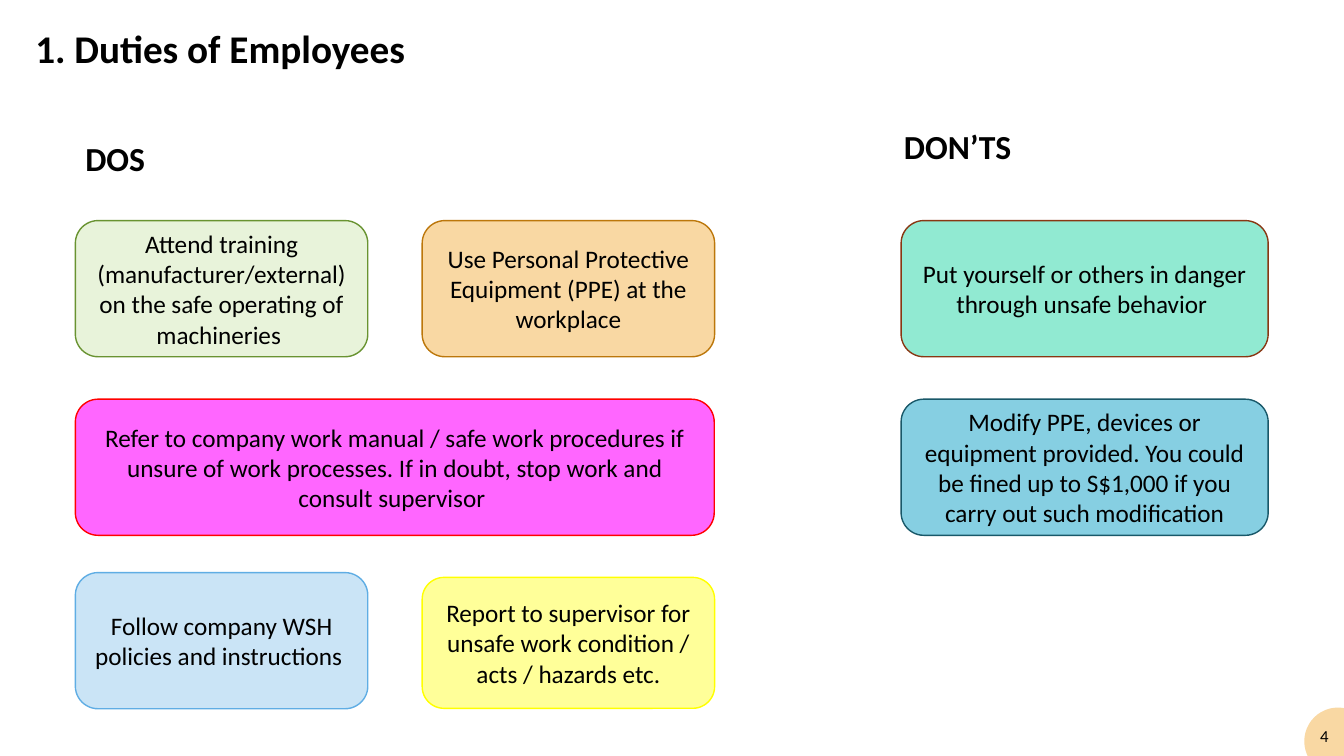
"""Build the slide on the duties of employees, with its dos and don'ts."""
import pptx
import pptx.dml.color
import pptx.enum.shapes
import pptx.enum.text
import pptx.util

Cm = pptx.util.Cm
RGBColor = pptx.dml.color.RGBColor
Shape = pptx.enum.shapes.MSO_SHAPE
Align = pptx.enum.text.PP_ALIGN

BLACK = RGBColor(0x00, 0x00, 0x00)
PALE_GREEN = RGBColor(0xE8, 0xF3, 0xDA)
GREEN = RGBColor(0x69, 0x93, 0x31)
PALE_ORANGE = RGBColor(0xF9, 0xD8, 0xA3)
ORANGE = RGBColor(0xBC, 0x77, 0x0B)
PINK = RGBColor(0xFF, 0x66, 0xFF)
RED = RGBColor(0xFF, 0x00, 0x00)
PALE_BLUE = RGBColor(0xCA, 0xE4, 0xF6)
BLUE = RGBColor(0x5F, 0xAD, 0xE4)
PALE_YELLOW = RGBColor(0xFF, 0xFF, 0x99)
YELLOW = RGBColor(0xFF, 0xFF, 0x00)
MINT = RGBColor(0x91, 0xEA, 0xD2)
BROWN = RGBColor(0x89, 0x37, 0x13)
TEAL = RGBColor(0x86, 0xCF, 0xE2)
DARK_TEAL = RGBColor(0x19, 0x58, 0x69)

LEFT, MIDDLE, RIGHT = 1.9, 10.64, 22.71
NARROW, WIDE, DONT_WIDTH = 7.37, 16.1, 9.25
ROW_1, ROW_2, ROW_3 = 5.56, 10.06, 14.43
HEIGHT = 3.43


def write(box, text, size, bold=False, align=Align.LEFT):
    para = box.text_frame.paragraphs[0]
    para.alignment = align
    span = para.add_run()
    span.text = text
    formats = {"name": "Calibri", "size": pptx.util.Pt(size), "bold": bold}
    for name, value in formats.items():
        setattr(span.font, name, value)
    span.font.color.rgb = BLACK


def add_filled(kind, left, top, width, height, fill):
    shape = page.shapes.add_shape(kind, Cm(left), Cm(top), Cm(width), Cm(height))
    shape.shadow.inherit = False
    shape.fill.solid()
    shape.fill.fore_color.rgb = fill
    return shape


deck = pptx.Presentation()
deck.slide_width = Cm(33.87)
deck.slide_height = Cm(19.05)
page = deck.slides.add_slide(deck.slide_layouts[6])

duties = [
    (LEFT, ROW_1, NARROW, HEIGHT, PALE_GREEN, GREEN,
     "Attend training (manufacturer/external) on the safe operating of machineries "),
    (MIDDLE, ROW_1, NARROW, HEIGHT, PALE_ORANGE, ORANGE,
     "Use Personal Protective Equipment (PPE) at the workplace"),
    (LEFT, ROW_2, WIDE, HEIGHT, PINK, RED,
     "Refer to company work manual / safe work procedures if unsure of work "
     "processes. If in doubt, stop work and consult supervisor "),
    (LEFT, ROW_3, NARROW, HEIGHT, PALE_BLUE, BLUE,
     "Follow company WSH policies and instructions "),
    (MIDDLE, 14.55, NARROW, 3.3, PALE_YELLOW, YELLOW,
     "Report to supervisor for unsafe work condition / acts / hazards etc."),
    (RIGHT, ROW_1, DONT_WIDTH, HEIGHT, MINT, BROWN,
     "Put yourself or others in danger through unsafe behavior "),
    (RIGHT, ROW_2, DONT_WIDTH, HEIGHT, TEAL, DARK_TEAL,
     "Modify PPE, devices or equipment provided. You could be fined up to "
     "S$1,000 if you carry out such modification"),
]
for left, top, width, height, fill, outline, text in duties:
    card = add_filled(Shape.ROUNDED_RECTANGLE, left, top, width, height, fill)
    card.line.color.rgb = outline
    card.line.width = pptx.util.Pt(1)
    card.text_frame.word_wrap = True
    card.text_frame.vertical_anchor = pptx.enum.text.MSO_ANCHOR.MIDDLE
    write(card, text, 18, align=Align.CENTER)

badge = add_filled(Shape.OVAL, 32.87, 17.83, 1.7, 1.7, PALE_ORANGE)
badge.line.fill.background()

labels = [
    (0.64, 0.48, 9.93, 1.45, "1. Duties of Employees", 28, True),
    (LEFT, 3.35, 2.03, 1.27, "DOS", 24, True),
    (22.53, 3.05, 3.25, 1.27, "DON’TS", 24, True),
    (33.02, 18.16, 0.74, 0.76, "4", 12, False),
]
for left, top, width, height, text, size, bold in labels:
    label = page.shapes.add_textbox(Cm(left), Cm(top), Cm(width), Cm(height))
    label.text_frame.word_wrap = False
    label.text_frame.auto_size = pptx.enum.text.MSO_AUTO_SIZE.SHAPE_TO_FIT_TEXT
    write(label, text, size, bold)

deck.save("out.pptx")
